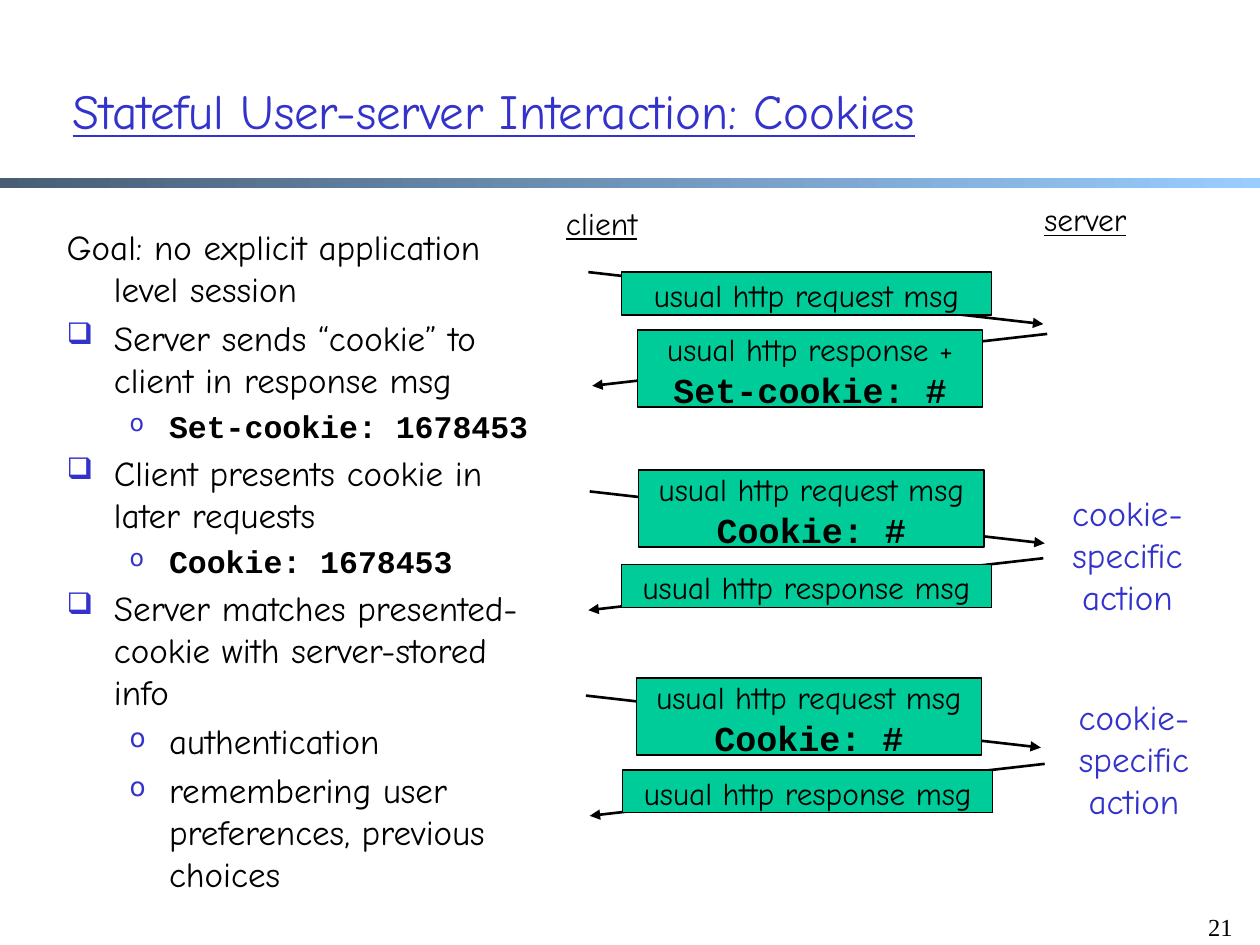
"""Build a slide on stateful user-server interaction with cookies."""
from lxml import etree
from pptx import Presentation
from pptx.dml.color import RGBColor
from pptx.enum.shapes import MSO_CONNECTOR, MSO_SHAPE
from pptx.enum.text import MSO_ANCHOR, PP_ALIGN
from pptx.oxml.ns import qn
from pptx.util import Pt

BLACK = RGBColor(0x00, 0x00, 0x00)
BLUE = RGBColor(0x33, 0x33, 0xCC)
GREEN = RGBColor(0x00, 0xCC, 0x99)
BAR_DARK = RGBColor(0x47, 0x5E, 0x76)
BAR_LIGHT = RGBColor(0x99, 0xCC, 0xFF)
HAND, MONO, SERIF = "Comic Neue", "Courier New", "Times New Roman"


def add_text(box, lines, color=BLACK, align=PP_ALIGN.CENTER, wrap=True, underline=None):
    frame = slide.shapes.add_textbox(*map(Pt, box)).text_frame
    frame.word_wrap = wrap
    for index, (text, size, face) in enumerate(lines):
        paragraph = frame.paragraphs[0] if index == 0 else frame.add_paragraph()
        paragraph.text = text
        paragraph.alignment = align
        paragraph.font.size = Pt(size)
        paragraph.font.name = face
        paragraph.font.bold = face == MONO
        paragraph.font.underline = underline
        paragraph.font.color.rgb = color
    return frame


def set_bullet(paragraph, char, percent, margin, indent):
    properties = paragraph._p.get_or_add_pPr()
    properties.set("marL", str(Pt(margin)))
    properties.set("indent", str(Pt(indent)))
    if char:
        bullet_color = etree.SubElement(properties, qn("a:buClr"))
        etree.SubElement(bullet_color, qn("a:srgbClr"), val=str(BLUE))
        etree.SubElement(properties, qn("a:buSzPct"), val=str(percent * 1000))
        etree.SubElement(properties, qn("a:buChar"), char=char)


deck = Presentation()
deck.slide_width, deck.slide_height = Pt(720), Pt(540)
slide = deck.slides.add_slide(deck.slide_layouts[6])

title_bar = slide.shapes.add_shape(MSO_SHAPE.RECTANGLE, Pt(0), Pt(101.5), Pt(720), Pt(6))
title_bar.shadow.inherit = False
title_bar.line.fill.background()
title_bar.fill.gradient()
title_bar.fill.gradient_angle = 0
for stop, position, color in zip(title_bar.fill.gradient_stops, (0, 1), (BAR_DARK, BAR_LIGHT)):
    stop.position = position
    stop.color.rgb = color

add_text((675.4, 517.7, 36, 36), [("21", 14, SERIF)], align=PP_ALIGN.RIGHT)
title = add_text((34.5, 18, 612, 90), [("Stateful User-server Interaction: Cookies", 28, HAND)],
                 BLUE, PP_ALIGN.LEFT, underline=True)
title.vertical_anchor = MSO_ANCHOR.MIDDLE

PLAIN, MAIN, SUB = ("", 0, 27, -27), ("❑", 85, 27, -27), ("o", 75, 58.5, -22.5)
goals = [
    (PLAIN, "Goal: no explicit application level session", 20, HAND),
    (MAIN, "Server sends “cookie” to client in response msg", 20, HAND),
    (SUB, "Set-cookie: 1678453", 18, MONO),
    (MAIN, "Client presents cookie in later requests", 20, HAND),
    (SUB, "Cookie: 1678453", 18, MONO),
    (MAIN, "Server matches presented-cookie with server-stored info", 20, HAND),
    (SUB, "authentication", 20, HAND),
    (SUB, "remembering user preferences, previous choices", 20, HAND),
]
body = add_text((31, 125.3, 283.7, 339), [goal[1:] for goal in goals], align=PP_ALIGN.LEFT)
for paragraph, (level, _, size, _) in zip(body.paragraphs, goals):
    paragraph.level = 1 if level == SUB else 0
    paragraph.space_before = Pt(size * 0.2)
    set_bullet(paragraph, *level)

add_text((305.3, 113, 77, 36), [("client", 18, HAND)], wrap=False, underline=True)
add_text((576.7, 110.9, 87, 36), [("server", 18, HAND)], wrap=False, underline=True)

ARROW_WIDTH, ARROW_DROP, LABEL_WIDTH = 260, 29.7, 218
messages = [
    ("request", 336.2, 155.5, 355, 155.5, "usual http request msg", ""),
    ("response", 338.4, 190.8, 364.3, 188.6, "usual http response +", "Set-cookie: #"),
    ("request", 337, 280.8, 365, 268.6, "usual http request msg", "Cookie: #"),
    ("response", 336.2, 319, 355, 322.6, "usual http response msg", ""),
    ("request", 334.8, 397.5, 363.6, 387.4, "usual http request msg", "Cookie: #"),
    ("response", 337, 436.5, 355.7, 440, "usual http response msg", ""),
]
for direction, client_x, start_y, left, top, text, header in messages:
    ends = [client_x, client_x + ARROW_WIDTH]
    start_x, end_x = ends if direction == "request" else reversed(ends)
    arrow = slide.shapes.add_connector(
        MSO_CONNECTOR.STRAIGHT, Pt(start_x), Pt(start_y), Pt(end_x), Pt(start_y + ARROW_DROP))
    arrow.line.color.rgb = BLACK
    arrow.line.width = Pt(1.5)
    etree.SubElement(arrow.line._get_or_add_ln(), qn("a:tailEnd"), type="triangle")
    etree.SubElement(arrow._element.spPr, qn("a:effectLst"))

    width, height, rise = (197.3, 44, 3.3) if header else (211.7, 24.5, 1.3)
    message = slide.shapes.add_shape(MSO_SHAPE.RECTANGLE, Pt(left), Pt(top), Pt(width), Pt(height))
    message.shadow.inherit = False
    message.fill.solid()
    message.fill.fore_color.rgb = GREEN
    message.line.color.rgb = BLACK
    message.line.width = Pt(0.75)

    lines = [(text, 18, HAND)] + ([(header, 20, MONO)] if header else [])
    label_left = left + (width - LABEL_WIDTH) / 2
    add_text((label_left, top - rise, LABEL_WIDTH, 52.5 if header else 29), lines)

action_lines = [(word, 20, HAND) for word in ("cookie-", "specific", "action")]
for left, top in ((600.3, 277.2), (604, 393.8)):
    add_text((left, top, 88, 79.2), action_lines, BLUE, wrap=False)

deck.save("out.pptx")
